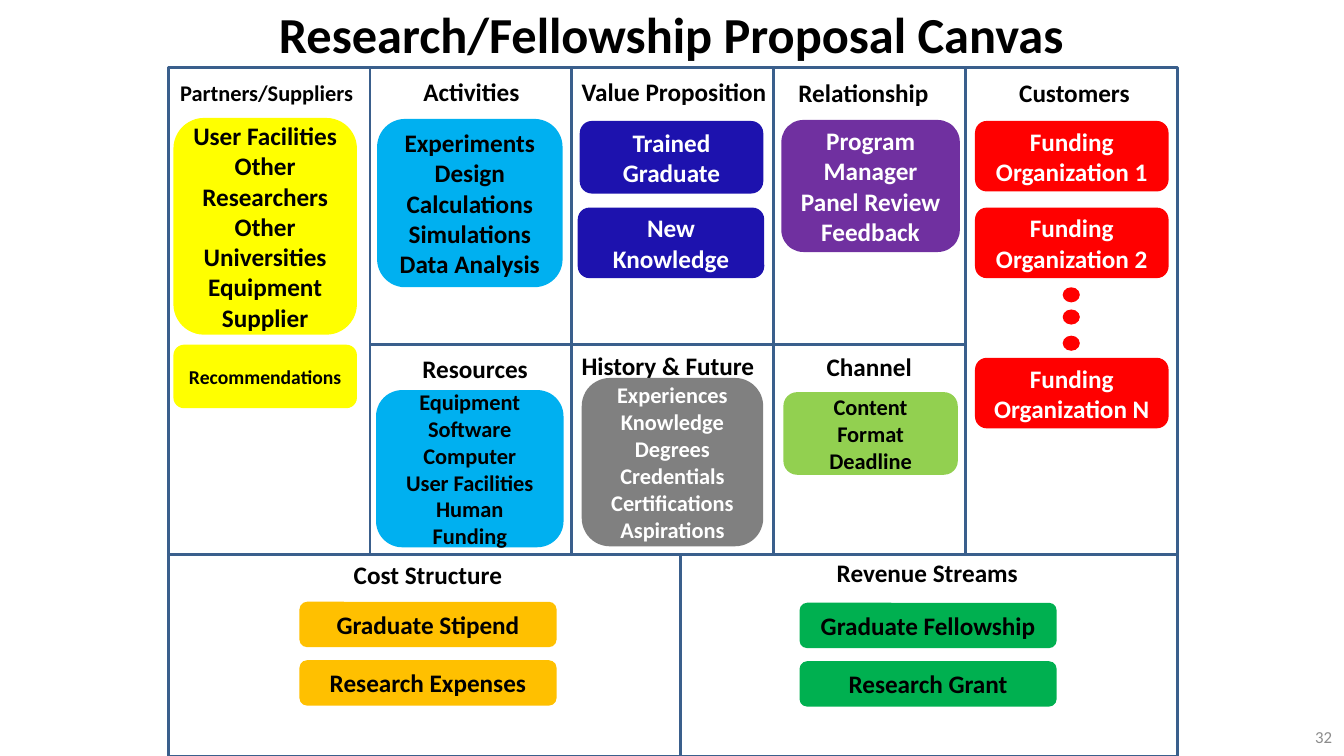
from pptx import Presentation
from pptx.dml.color import RGBColor
from pptx.enum.shapes import MSO_SHAPE
from pptx.enum.text import MSO_ANCHOR, MSO_AUTO_SIZE, PP_ALIGN
from pptx.util import Inches, Pt

RECTANGLE = MSO_SHAPE.RECTANGLE
ROUNDED = MSO_SHAPE.ROUNDED_RECTANGLE
OVAL = MSO_SHAPE.OVAL
MIDDLE, TOP = MSO_ANCHOR.MIDDLE, MSO_ANCHOR.TOP
LEFT, CENTER, RIGHT = PP_ALIGN.LEFT, PP_ALIGN.CENTER, PP_ALIGN.RIGHT
NO_FIT, GROW = MSO_AUTO_SIZE.NONE, MSO_AUTO_SIZE.SHAPE_TO_FIT_TEXT

BLACK = RGBColor(0x00, 0x00, 0x00)
WHITE = RGBColor(0xFF, 0xFF, 0xFF)
GRID_BLUE = RGBColor(0x3A, 0x5F, 0x8C)
NUMBER_GRAY = RGBColor(0x8C, 0x8C, 0x8C)
YELLOW = RGBColor(0xFF, 0xFF, 0x00)
SKY = RGBColor(0x00, 0xB0, 0xF0)
NAVY = RGBColor(0x1D, 0x12, 0xAE)
PURPLE = RGBColor(0x70, 0x30, 0xA0)
RED = RGBColor(0xFF, 0x00, 0x00)
GRAY = RGBColor(0x80, 0x80, 0x80)
LIME = RGBColor(0x92, 0xD0, 0x50)
AMBER = RGBColor(0xFF, 0xC0, 0x00)
GREEN = RGBColor(0x00, 0xB0, 0x50)

FONT = "Calibri"
COLUMNS = [1.67, 3.67, 5.67, 7.67, 9.58, 11.68]
ROWS = [0.67, 3.42, 5.5, 7.5]
COST_SPLIT = 6.75

CELLS = [
    (COLUMNS[0], ROWS[2], COST_SPLIT, ROWS[3]),
    (COLUMNS[0], ROWS[0], COLUMNS[1], ROWS[2]),
    (COST_SPLIT, ROWS[2], COLUMNS[5], ROWS[3]),
    (COLUMNS[1], ROWS[0], COLUMNS[2], ROWS[1]),
    (COLUMNS[2], ROWS[0], COLUMNS[3], ROWS[1]),
    (COLUMNS[3], ROWS[0], COLUMNS[4], ROWS[1]),
    (COLUMNS[4], ROWS[0], COLUMNS[5], ROWS[2]),
    (COLUMNS[2], ROWS[1], COLUMNS[3], ROWS[2]),
]

HEADINGS = [
    ("Cost Structure", 3.41, 5.5, 1.68, False),
    ("Value Proposition", 5.67, 0.71, 2.05, False),
    ("Customers", 10.01, 0.72, 1.31, False),
    ("Revenue Streams", 8.2, 5.48, 2.01, False),
    ("History & Future", 5.67, 3.43, 1.93, False),
    ("Channel", 8.1, 3.44, 1.08, True),
    ("Relationship", 7.82, 0.72, 1.59, True),
    ("Activities", 4.1, 0.71, 1.16, False),
    ("Resources", 4.09, 3.46, 1.25, False),
]

CARDS = [
    ("Trained Graduate", 5.75, 1.2, 1.82, 0.72, NAVY, WHITE, 18),
    ("New Knowledge", 5.73, 2.06, 1.85, 0.7, NAVY, WHITE, 18),
    ("Funding Organization 1", 9.67, 1.2, 1.92, 0.7, RED, WHITE, 18),
    ("Funding Organization 2", 9.67, 2.06, 1.92, 0.7, RED, WHITE, 18),
    ("Funding Organization N", 9.67, 3.55, 1.92, 0.7, RED, WHITE, 18),
    ("Graduate Fellowship", 7.93, 5.98, 2.55, 0.45, GREEN, BLACK, 18),
    ("Research Grant", 7.93, 6.56, 2.55, 0.45, GREEN, BLACK, 18),
    ("Graduate Stipend", 2.97, 5.97, 2.55, 0.45, AMBER, BLACK, 18),
    ("Research Expenses", 2.97, 6.55, 2.55, 0.45, AMBER, BLACK, 18),
    ("Content\nFormat\nDeadline", 7.77, 3.89, 1.73, 0.82, LIME, BLACK, 16),
    ("Program Manager\nPanel Review\nFeedback",
     7.75, 1.19, 1.77, 1.31, PURPLE, WHITE, 18),
    ("Experiments\nDesign\nCalculations\nSimulations\nData Analysis",
     3.74, 1.18, 1.84, 1.67, SKY, BLACK, 18),
    ("Equipment\nSoftware\nComputer\nUser Facilities\nHuman\nFunding",
     3.73, 3.87, 1.86, 1.56, SKY, BLACK, 16),
    ("User Facilities\nOther Researchers\nOther Universities\nEquipment Supplier",
     1.72, 1.17, 1.82, 2.15, YELLOW, BLACK, 18),
    ("Recommendations", 1.72, 3.42, 1.82, 0.63, YELLOW, BLACK, 14),
    ("Experiences\nKnowledge\nDegrees\nCredentials\nCertifications\nAspirations",
     5.77, 3.75, 1.8, 1.67, GRAY, WHITE, 16),
]

DOT_TOPS = [2.85, 3.07, 3.33]


def write_text(shape, text, size, color, bold=True, align=CENTER, anchor=MIDDLE,
               wrap=True, fit=NO_FIT):
    frame = shape.text_frame
    frame.text = text
    frame.word_wrap = wrap
    frame.auto_size = fit
    frame.vertical_anchor = anchor
    for para in frame.paragraphs:
        para.alignment = align
        for span in para.runs:
            span.font.name = FONT
            span.font.size = Pt(size)
            span.font.bold = bold
            span.font.color.rgb = color


def set_title(page, text):
    title = page.shapes.title
    title.left, title.top = Inches(0.66), Inches(-0.01)
    title.width, title.height = Inches(12), Inches(0.68)
    write_text(title, text, 36, BLACK)


def add_label(page, text, left, top, width, height, size, color, **style):
    box = page.shapes.add_textbox(Inches(left), Inches(top), Inches(width), Inches(height))
    write_text(box, text, size, color, **style)


def add_figure(page, kind, left, top, width, height, fill=None):
    figure = page.shapes.add_shape(
        kind, Inches(left), Inches(top), Inches(width), Inches(height))
    figure.shadow.inherit = False
    if fill is None:
        figure.fill.background()
        figure.line.color.rgb = GRID_BLUE
        figure.line.width = Pt(2)
    else:
        figure.fill.solid()
        figure.fill.fore_color.rgb = fill
        figure.line.fill.background()
    return figure


def main():
    deck = Presentation()
    deck.slide_width, deck.slide_height = Inches(13.33), Inches(7.5)
    page = deck.slides.add_slide(deck.slide_layouts[5])
    set_title(page, "Research/Fellowship Proposal Canvas")
    add_label(page, "32", 10.2, 7.11, 3.11, 0.4, 12, NUMBER_GRAY, bold=False, align=RIGHT)

    for left, top, right, bottom in CELLS:
        add_figure(page, RECTANGLE, left, top, right - left, bottom - top)
    for text, left, top, width, wrap in HEADINGS:
        add_label(page, text, left, top, width, 0.4, 18, BLACK,
                  align=LEFT, anchor=TOP, wrap=wrap, fit=GROW)
    add_label(page, "Partners/Suppliers", 1.67, 0.74, 1.95, 0.37, 16, BLACK,
              anchor=TOP, fit=GROW)
    for text, left, top, width, height, fill, color, size in CARDS:
        card = add_figure(page, ROUNDED, left, top, width, height, fill)
        write_text(card, text, size, color)
    for top in DOT_TOPS:
        add_figure(page, OVAL, 10.54, top, 0.17, 0.15, RED)

    deck.save("out.pptx")


if __name__ == "__main__":
    main()
